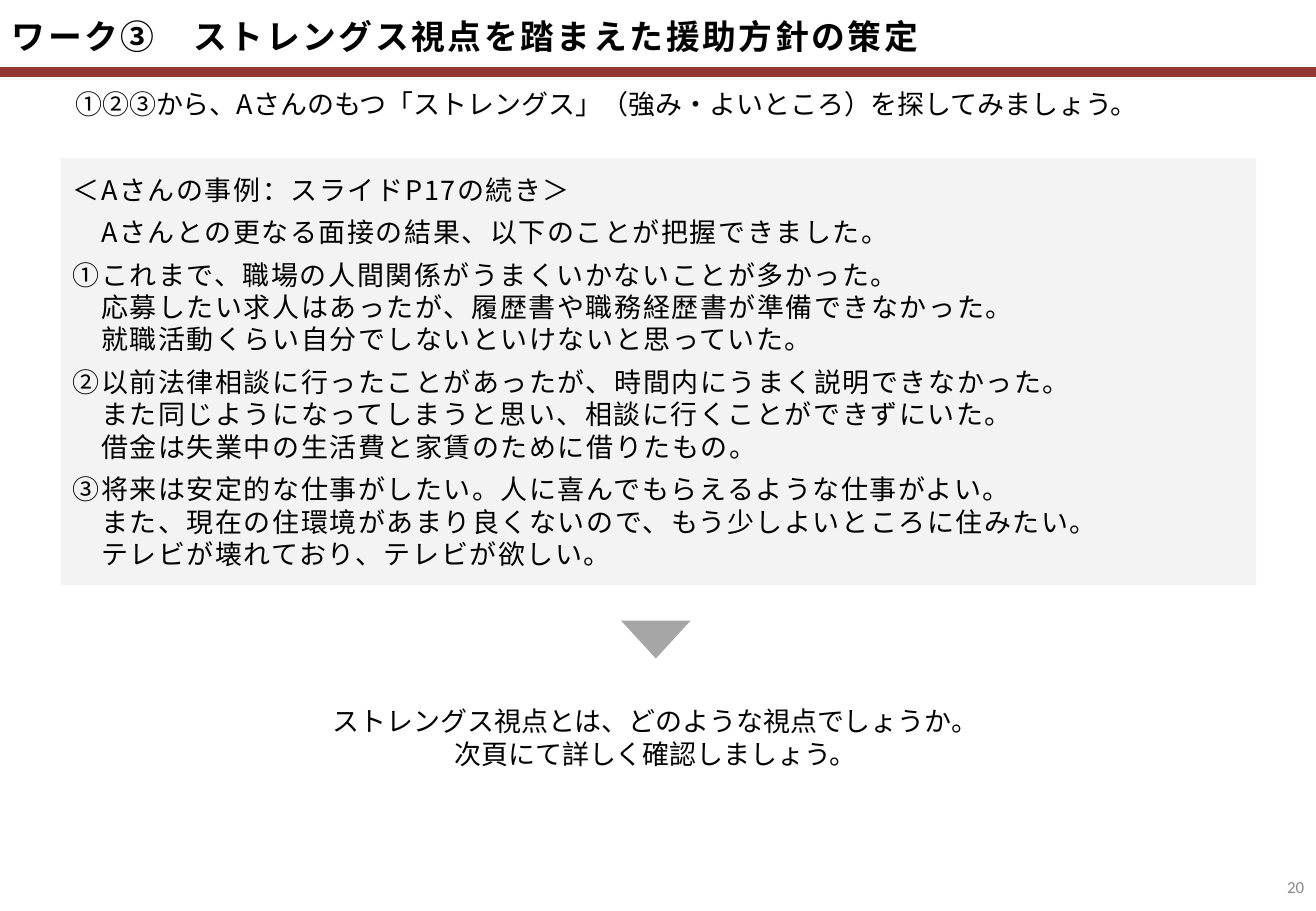
from lxml import etree
from pptx import Presentation
from pptx.dml.color import RGBColor
from pptx.enum import shapes, text
from pptx.oxml.ns import qn
from pptx.util import Cm, Pt

HUES = {"ink": "000000", "rule": "953735", "panel": "EAE8E8",
        "arrow": "A6A6A6", "page": "898989"}
SANS = "Noto Sans CJK JP"
WIDE, HIGH = 27.51, 19.05
ALIGN = text.PP_ALIGN

CASE = [
    "＜Aさんの事例：スライドP17の続き＞",
    "　Aさんとの更なる面接の結果、以下のことが把握できました。",
    "①これまで、職場の人間関係がうまくいかないことが多かった。\n"
    "　応募したい求人はあったが、履歴書や職務経歴書が準備できなかった。\n"
    "　就職活動くらい自分でしないといけないと思っていた。",
    "②以前法律相談に行ったことがあったが、時間内にうまく説明できなかった。\n"
    "　また同じようになってしまうと思い、相談に行くことができずにいた。\n"
    "　借金は失業中の生活費と家賃のために借りたもの。",
    "③将来は安定的な仕事がしたい。人に喜んでもらえるような仕事がよい。\n"
    "　また、現在の住環境があまり良くないので、もう少しよいところに住みたい。\n"
    "　テレビが壊れており、テレビが欲しい。",
]


def color(name):
    return RGBColor.from_string(HUES[name])


def write(shape, lines, size=16, align=ALIGN.LEFT, face=SANS, hue="ink",
          bold=False, track=0, gap=0):
    """Fill a shape with paragraphs; track and gap are in points."""
    frame = shape.text_frame
    frame.word_wrap = True
    frame.vertical_anchor = text.MSO_ANCHOR.MIDDLE
    for i, line in enumerate(lines):
        par = frame.add_paragraph() if i else frame.paragraphs[0]
        par.text = line
        par.alignment = align
        par.space_before = Pt(gap)
        font = par.font
        font.size, font.bold, font.name = Pt(size), bold, face
        font.color.rgb = color(hue)
        props = par._p.pPr.find(qn("a:defRPr"))
        props.set("spc", str(int(track * 100)))
        etree.SubElement(props, qn("a:ea")).set("typeface", face)


def label(slide, box, lines, **style):
    write(slide.shapes.add_textbox(*map(Cm, box)), lines, **style)


def block(slide, kind, box, hue):
    """Add a flat filled shape without an outline."""
    shape = slide.shapes.add_shape(kind, *map(Cm, box))
    shape.shadow.inherit = False
    shape.fill.solid()
    shape.fill.fore_color.rgb = color(hue)
    shape.line.fill.background()
    return shape


def header(slide, box):
    left, top, width, height = box
    rule = slide.shapes.add_connector(
        shapes.MSO_CONNECTOR.STRAIGHT,
        *map(Cm, (left, top + height, left + width, top + height)))
    rule.line.color.rgb = color("rule")
    rule.line.width = Pt(6)
    etree.SubElement(rule._element.spPr, qn("a:effectLst"))
    label(slide, (left, top, 23.04, height),
          ["ワーク③　ストレングス視点を踏まえた援助方針の策定"],
          size=20, bold=True, track=1.5)


def case(slide, box):
    panel = block(slide, shapes.MSO_SHAPE.RECTANGLE, box, "panel")
    tint = panel._element.spPr.find(".//" + qn("a:srgbClr"))
    etree.SubElement(tint, qn("a:alpha")).set("val", "50000")
    write(panel, CASE, track=1, gap=6)


def closing(slide, box):
    """Down arrow above the centred closing question."""
    left, top, width, height = box
    arrow = block(slide, shapes.MSO_SHAPE.ISOSCELES_TRIANGLE,
                  (left + (width - 1.45) / 2, top, 1.45, 0.79), "arrow")
    arrow.rotation = 180
    label(slide, (left, top + height - 1.78, width, 1.78),
          ["ストレングス視点とは、どのような視点でしょうか。",
           "次頁にて詳しく確認しましょう。"], align=ALIGN.CENTER)


def main():
    deck = Presentation()
    deck.slide_width, deck.slide_height = Cm(WIDE), Cm(HIGH)
    slide = deck.slides.add_slide(deck.slide_layouts[6])
    header(slide, (0, 0, WIDE, 1.5))
    label(slide, (0.94, 1.6, 23.5, 1.14),
          ["①②③から、Aさんのもつ「ストレングス」（強み・よいところ）"
           "を探してみましょう。"], align=ALIGN.CENTER)
    case(slide, (1.27, 3.3, 24.99, 8.94))
    closing(slide, (1.96, 12.98, 23.5, 3.33))
    label(slide, (WIDE - 1.04, 18.03, 1.04, 1.02), ["20"], size=10,
          align=ALIGN.RIGHT, face="Calibri", hue="page")
    deck.save("out.pptx")


if __name__ == "__main__":
    main()
